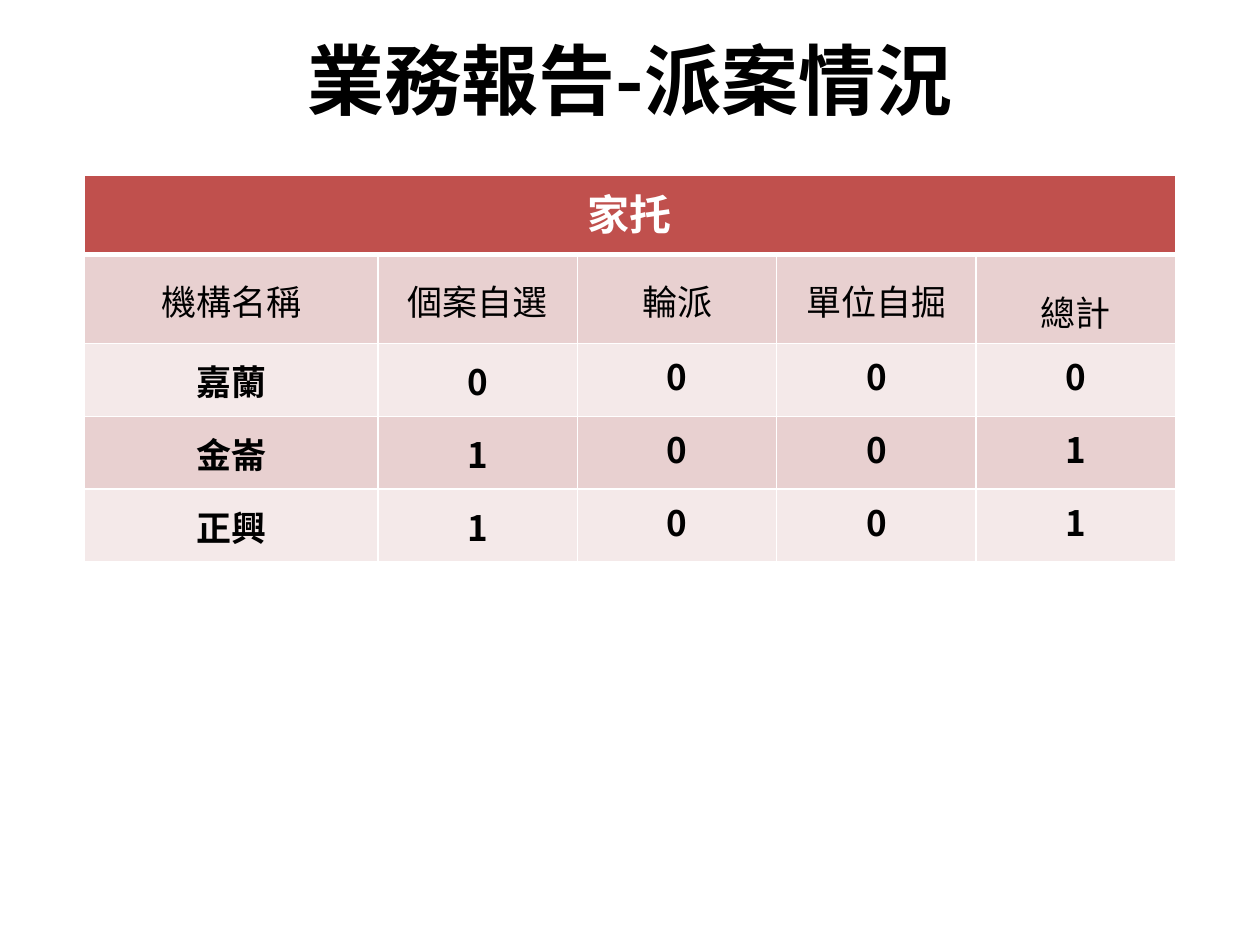
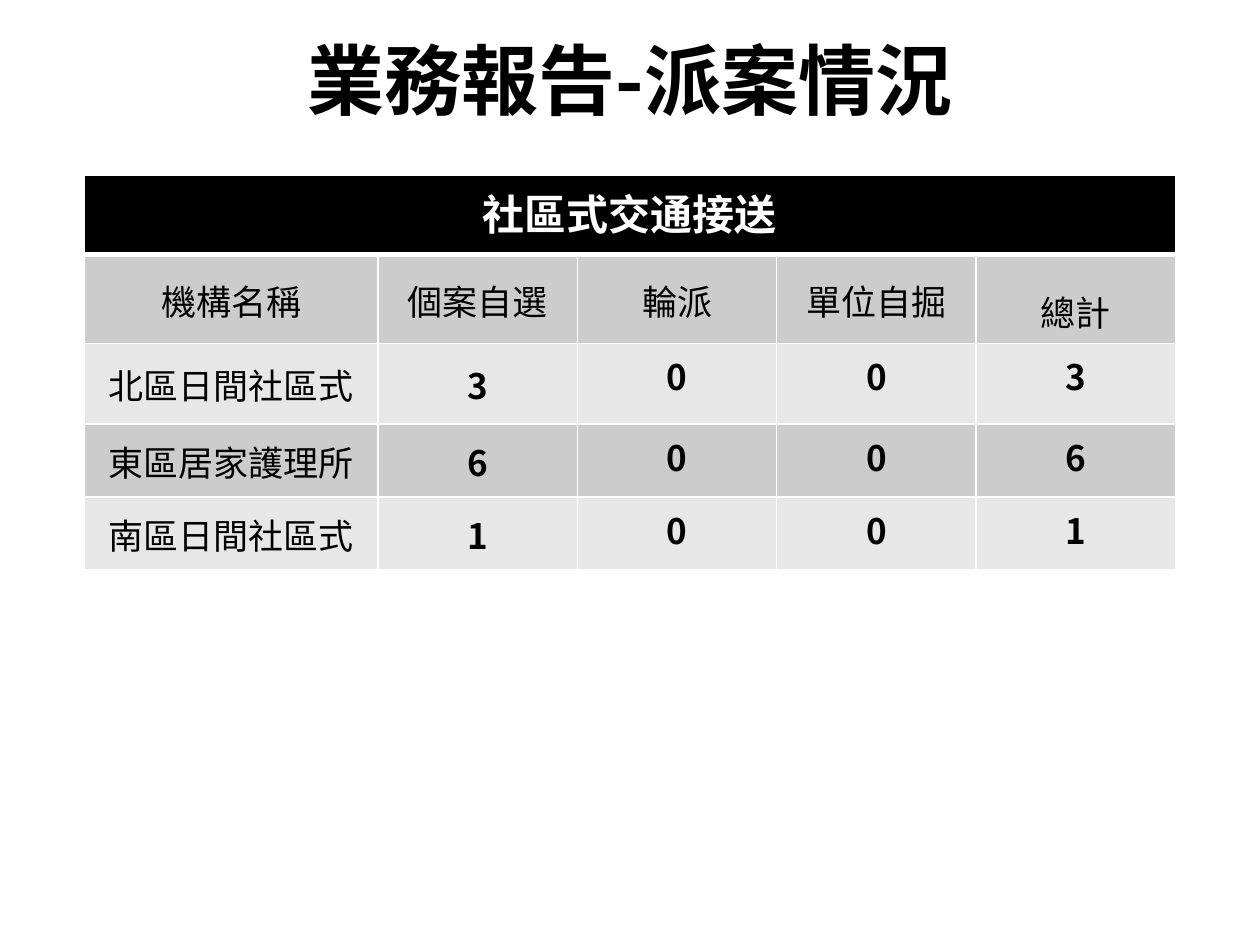
from lxml.etree import SubElement
from pptx import Presentation
from pptx.dml.color import RGBColor
from pptx.enum.text import MSO_ANCHOR as Anchor, PP_ALIGN as Align
from pptx.oxml import parse_xml
from pptx.oxml.ns import nsdecls, qn
from pptx.util import Cm, Pt

FONT = "Noto Sans CJK SC"
BLACK = RGBColor(0x00, 0x00, 0x00)
WHITE = RGBColor(0xFF, 0xFF, 0xFF)
RED = RGBColor(0xC0, 0x50, 0x4D)
ROSE = RGBColor(0xE8, 0xD0, 0xD0)
PALE_ROSE = RGBColor(0xF4, 0xE9, 0xE9)
GREY = RGBColor(0xCC, 0xCC, 0xCC)
PALE_GREY = RGBColor(0xE7, 0xE7, 0xE7)

HEADING = "業務報告-派案情況"
COLUMNS = ["機構名稱", "個案自選", "輪派", "單位自掘", "總計"]
COLUMN_WIDTHS = [5.92] + [4.02] * 4
HEADING_BOX = (1.27, 0, 22.86, 3.18)
TABLE_BOX = (1.7, 3.53, 22, 7.67)

REPORTS = [
    dict(
        service="家托",
        agencies=[("嘉蘭", 0, 0, 0, 0), ("金崙", 1, 0, 0, 1), ("正興", 1, 0, 0, 1)],
        colours=(RED, ROSE, PALE_ROSE),
        row_heights=[1.6, 1.63, 1.47, 1.47, 1.47],
        bold_names=True,
    ),
    dict(
        service="社區式交通接送",
        agencies=[
            ("北區日間社區式", 3, 0, 0, 3),
            ("東區居家護理所", 6, 0, 0, 6),
            ("南區日間社區式", 1, 0, 0, 1),
        ],
        colours=(BLACK, GREY, PALE_GREY),
        row_heights=[1.6, 1.63, 1.63, 1.47, 1.47],
        bold_names=False,
    ),
]


def write(frame, text, size=20, bold=False, colour=BLACK, spacing=None):
    paragraph = frame.paragraphs[0]
    paragraph.alignment = Align.CENTER
    if spacing:
        paragraph.line_spacing = spacing
    run = paragraph.add_run()
    run.text = str(text)
    font = run.font
    font.size, font.bold, font.name = Pt(size), bold, FONT
    font.color.rgb = colour
    east_asian = SubElement(run._r.rPr, qn("a:ea"))
    east_asian.set("typeface", FONT)


def outline(cell, top=1, bottom=1):
    widths = {"lnL": 1, "lnR": 1, "lnT": top, "lnB": bottom}
    properties = cell._tc.get_or_add_tcPr()
    for position, (side, width) in enumerate(widths.items()):
        border = parse_xml(
            f'<a:{side} {nsdecls("a")} w="{Pt(width)}"><a:solidFill>'
            f'<a:srgbClr val="{WHITE}"/></a:solidFill></a:{side}>'
        )
        properties.insert(position, border)


def paint(cell, colour, **borders):
    cell.fill.solid()
    cell.fill.fore_color.rgb = colour
    outline(cell, **borders)


def tighten(cell):
    cell.vertical_anchor = Anchor.MIDDLE
    cell.margin_left = cell.margin_right = cell.margin_top = Cm(0.03)
    cell.margin_bottom = 0


def add_heading(slide, box):
    heading = slide.shapes.title
    heading.left, heading.top, heading.width, heading.height = map(Cm, box)
    heading.text_frame.vertical_anchor = Anchor.MIDDLE
    write(heading.text_frame, HEADING, size=44, bold=True)


def add_referrals(slide, box, service, agencies, colours, row_heights, bold_names):
    banner, dark_band, light_band = colours
    records = [COLUMNS, *agencies]
    table = slide.shapes.add_table(
        len(row_heights), len(COLUMNS), *map(Cm, box)
    ).table
    table.horz_banding = False
    for column, width in zip(table.columns, COLUMN_WIDTHS):
        column.width = Cm(width)
    for row, height in zip(table.rows, row_heights):
        row.height = Cm(height)

    for cell in table.rows[0].cells:
        paint(cell, banner, bottom=3)
    table.cell(0, 0).merge(table.cell(0, len(COLUMNS) - 1))
    write(table.cell(0, 0).text_frame, service, size=24, bold=True, colour=WHITE)

    total = len(COLUMNS) - 1
    for r, record in enumerate(records, start=1):
        is_header = r == 1
        for c, value in enumerate(record):
            cell = table.cell(r, c)
            paint(cell, dark_band if r % 2 else light_band, top=3 if is_header else 1)
            if c < (total if is_header else 2):
                tighten(cell)
            write(
                cell.text_frame,
                value,
                bold=not is_header and (c > 0 or bold_names),
                spacing=1.5 if is_header and c == total else None,
            )


def add_report(deck, report):
    slide = deck.slides.add_slide(deck.slide_layouts[5])
    add_referrals(slide, TABLE_BOX, **report)
    add_heading(slide, HEADING_BOX)


def main():
    deck = Presentation()
    deck.slide_width, deck.slide_height = Cm(25.4), Cm(19.05)
    for report in REPORTS:
        add_report(deck, report)
    deck.save("out.pptx")


if __name__ == "__main__":
    main()
